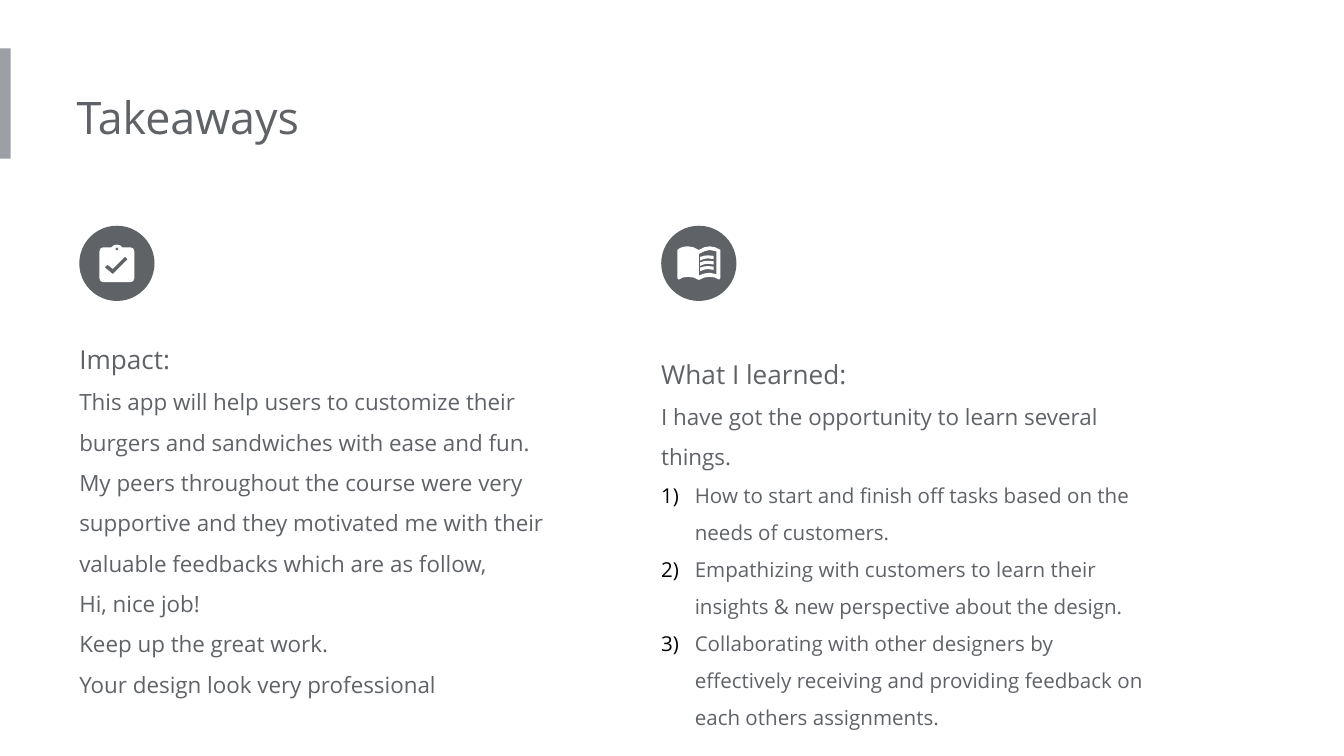
from pptx import Presentation
from pptx.dml.color import RGBColor
from pptx.enum.shapes import MSO_SHAPE
from pptx.enum.text import MSO_ANCHOR, MSO_AUTO_SIZE
from pptx.oxml.ns import qn
from pptx.util import Inches, Pt
from lxml.etree import SubElement

RECTANGLE = MSO_SHAPE.RECTANGLE
OVAL = MSO_SHAPE.OVAL
TOP = MSO_ANCHOR.TOP
GROW = MSO_AUTO_SIZE.SHAPE_TO_FIT_TEXT

CELL = Inches(0.1)
COLUMNS, ROWS = 100, 56.25
ICON_STEPS = 100
ICON_ROW, ICON_SIZE = 16.8, 5.6
TEXT_WIDTH = 37.7

THEME = {
    "font": "Open Sans",
    "ink": RGBColor(0x5F, 0x63, 0x68),
    "accent": RGBColor(0x9A, 0xA0, 0xA6),
    "paper": RGBColor(0xFF, 0xFF, 0xFF),
    "number": "000000",
    "title": Pt(24),
    "heading": Pt(14),
    "body": Pt(12),
    "list": Pt(11),
}

IMPACT = [
    ("heading", "Impact:"),
    ("body", "This app will help users to customize their burgers and sandwiches with ease and fun."),
    ("body", "My peers throughout the course were very supportive and they motivated me "
             "with their valuable feedbacks which are as follow,"),
    ("body", "Hi, nice job!\vKeep up the great work."),
    ("body", "Your design look very professional"),
]
LEARNED = [
    ("heading", "What I learned:"),
    ("body", "I have got the opportunity to learn several things."),
    ("list", "How to start and finish off tasks based on the needs of customers."),
    ("list", "Empathizing with customers to learn their insights & new perspective about the design."),
    ("list", "Collaborating with other designers by effectively receiving and providing "
             "feedback on each others assignments."),
]

CLIPBOARD = [
    [(18, 16), (24, 16), (25.5, 14.6), (28, 14), (30.5, 14.6), (32, 16), (38, 16),
     (40.2, 16.8), (41, 19), (41, 39), (40.2, 41.2), (38, 42), (18, 42),
     (15.8, 41.2), (15, 39), (15, 19), (15.8, 16.8)],
    [(28, 16), (29.3, 17.3), (28, 18.6), (26.7, 17.3)],
    [(25, 36), (19, 31), (21, 29), (25, 32), (34, 23), (36, 25)],
]
BOOK = [
    [(12, 18), (14, 16.5), (17, 15.5), (20, 15.3), (24, 16), (28, 18), (32, 16),
     (36, 15.3), (40, 16), (44, 18), (44, 39), (43, 40), (40, 38.5), (36, 38),
     (32, 38.5), (28, 40.3), (24, 38.5), (20, 38), (16, 38.5), (13, 40), (12, 39)],
    [(28, 21), (32, 19), (36, 18), (41, 19), (41, 36), (36, 35), (32, 35.5), (28, 37)],
]
TEXT_LINE = [(29, 1.2), (32, 0.3), (35, 0), (39, 0.4),
             (39, 2.8), (35, 2.2), (32, 2.6), (29, 3.8)]
BOOK_LINES = [[[(x, y + top) for x, y in TEXT_LINE]] for top in (22, 26, 30)]


def cells(*counts):
    return [round(count * CELL) for count in counts]


def apply_format(target, values):
    for name, value in values.items():
        setattr(target, name, value)


def paint(shape, color):
    shape.shadow.inherit = False
    shape.fill.solid()
    shape.fill.fore_color.rgb = color
    shape.line.fill.background()


def add_block(page, kind, place, color):
    paint(page.shapes.add_shape(kind, *cells(*place)), color)


def add_outline(page, column, contours):
    def scaled(points):
        return [(x * ICON_STEPS, y * ICON_STEPS) for x, y in points]

    first, *others = [scaled(points) for points in contours]
    builder = page.shapes.build_freeform(*first[0], scale=CELL / 10 / ICON_STEPS)
    builder.add_line_segments(first[1:], close=True)
    for points in others:
        builder.move_to(*points[0])
        builder.add_line_segments(points[1:], close=True)
    paint(builder.convert_to_shape(*cells(column, ICON_ROW)), THEME["paper"])


def add_icon(page, column, drawings):
    add_block(page, OVAL, (column, ICON_ROW, ICON_SIZE, ICON_SIZE), THEME["ink"])
    for contours in drawings:
        add_outline(page, column, contours)


def number_para(para):
    properties = para._p.get_or_add_pPr()
    indent = Inches(0.25)
    properties.set("marL", str(indent))
    properties.set("indent", str(-indent))
    color = SubElement(properties, qn("a:buClr"))
    SubElement(color, qn("a:srgbClr"), val=THEME["number"])
    SubElement(properties, qn("a:buFont"), typeface=THEME["font"])
    SubElement(properties, qn("a:buAutoNum"), type="arabicParenR")


def fill_para(para, style, text, spacing):
    para.text = text
    para.line_spacing = spacing
    for span in para.runs:
        apply_format(span.font, {"name": THEME["font"], "size": THEME[style]})
        span.font.color.rgb = THEME["ink"]
    for line_break in para._p.findall(qn("a:br")):
        SubElement(line_break, qn("a:rPr"), sz=str(int(THEME[style].pt * 100)))
    if style == "list":
        number_para(para)


def add_text(page, place, content, spacing):
    frame = page.shapes.add_textbox(*cells(*place)).text_frame
    margin = Inches(0.1)
    apply_format(frame, {
        "word_wrap": True, "auto_size": GROW, "vertical_anchor": TOP,
        "margin_left": 0, "margin_right": margin,
        "margin_top": margin, "margin_bottom": margin,
    })
    for index, (style, text) in enumerate(content):
        para = frame.add_paragraph() if index else frame.paragraphs[0]
        fill_para(para, style, text, spacing)


def main():
    deck = Presentation()
    deck.slide_width, deck.slide_height = cells(COLUMNS, ROWS)
    page = deck.slides.add_slide(deck.slide_layouts[6])
    add_block(page, RECTANGLE, (0, 3.6, 0.8, 8.2), THEME["accent"])
    add_text(page, (5.7, 5.7, 53.9, 6.1), [("title", "Takeaways")], 1.0)
    sections = [
        (5.9, 23.4, 29.8, IMPACT, [CLIPBOARD]),
        (49.2, 24.5, 33.7, LEARNED, [BOOK, *BOOK_LINES]),
    ]
    for column, row, height, content, drawings in sections:
        add_text(page, (column, row, TEXT_WIDTH, height), content, 1.5)
        add_icon(page, column, drawings)
    deck.save("out.pptx")


if __name__ == "__main__":
    main()
